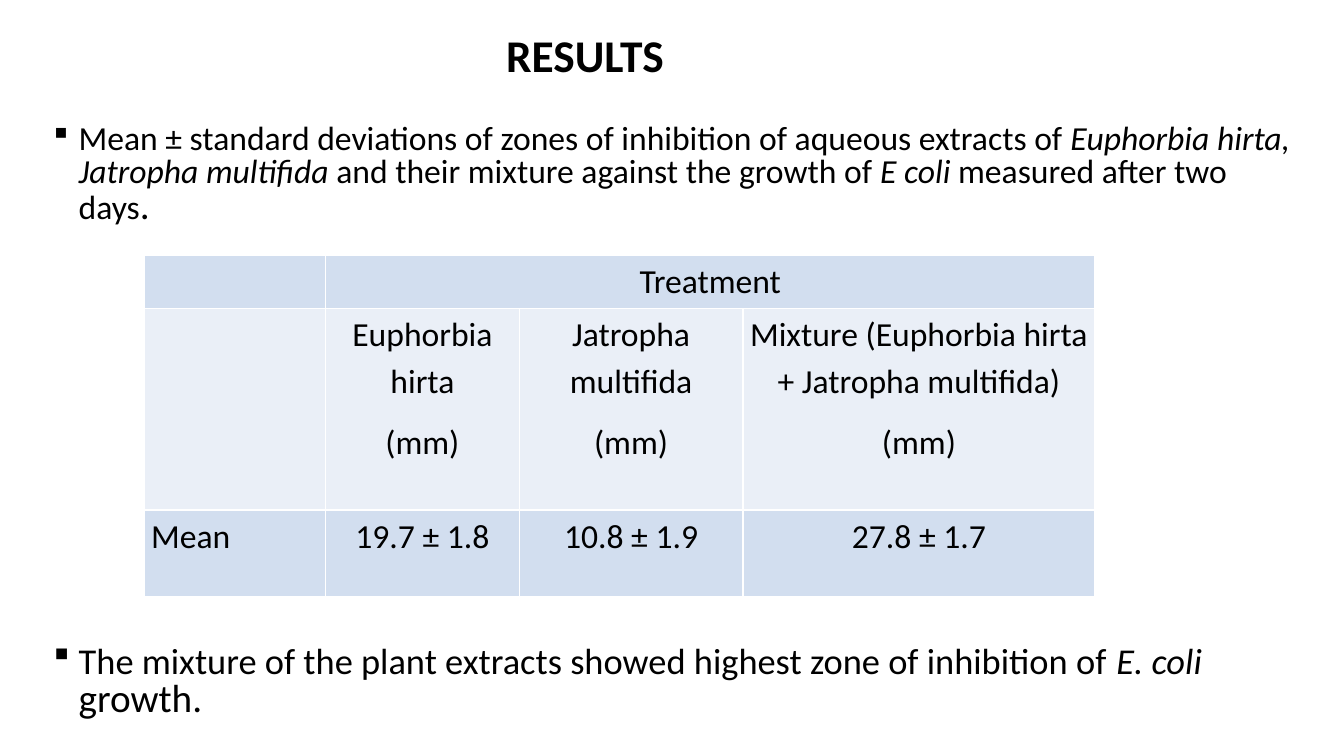
from lxml import etree
from pptx import Presentation
from pptx.dml.color import RGBColor
from pptx.enum.text import MSO_ANCHOR, MSO_AUTO_SIZE, PP_ALIGN
from pptx.oxml.ns import qn
from pptx.util import Inches, Pt

LEFT, CENTER, JUSTIFY = PP_ALIGN.LEFT, PP_ALIGN.CENTER, PP_ALIGN.JUSTIFY
MIDDLE, TOP = MSO_ANCHOR.MIDDLE, MSO_ANCHOR.TOP
NO_AUTOFIT = MSO_AUTO_SIZE.NONE
COLORS = {"text": "000000", "band": "D2DEEF", "light": "EAEFF7", "border": "FFFFFF"}
FONT = "Calibri"


def style_font(font, size):
    font.name = FONT
    font.size = Pt(size)
    font.color.rgb = RGBColor.from_string(COLORS["text"])


def add_borders(cell):
    properties = cell._tc.get_or_add_tcPr()
    for side in ("lnL", "lnR", "lnT", "lnB"):
        line = etree.SubElement(properties, qn(f"a:{side}"), w=str(Pt(1)))
        fill = etree.SubElement(line, qn("a:solidFill"))
        etree.SubElement(fill, qn("a:srgbClr"), val=COLORS["border"])


deck = Presentation()
deck.slide_width, deck.slide_height = Inches(13.33), Inches(7.5)
page = deck.slides.add_slide(deck.slide_layouts[1])

# Title
title = page.shapes.title
title.left, title.top = Inches(0.92), Inches(0.22)
title.width, title.height = Inches(11.5), Inches(0.71)
frame = title.text_frame
frame.auto_size = NO_AUTOFIT
frame.vertical_anchor = MIDDLE
frame.margin_left = Inches(4.1)
frame.text = "RESULTS"
para = frame.paragraphs[0]
para.alignment = LEFT
para.line_spacing = 0.9
style_font(para.font, 32.4)
para.font.bold = True

# Bullets: space before, then spans of (text, size, italic)
bullets = [
    (10, [
        ("Mean ± standard deviations of zones of inhibition of aqueous extracts of ", 24, False),
        ("Euphorbia hirta, Jatropha multifida", 24, True),
        (" and their mixture against the growth of ", 24, False),
        ("E coli ", 24, True),
        ("measured after two days", 24, False),
        (".", 28, False),
    ]),
    (298, [
        ("The mixture of the plant extracts showed highest zone of inhibition of ", 26, False),
        ("E. coli", 26, True),
        (" growth.", 28, False),
    ]),
]
body = page.placeholders[1]
body.left, body.top = Inches(0.43), Inches(1.19)
body.width, body.height = Inches(12.49), Inches(6.1)
frame = body.text_frame
frame.auto_size = NO_AUTOFIT
frame.vertical_anchor = TOP
for index, (space_before, spans) in enumerate(bullets):
    para = frame.add_paragraph() if index else frame.paragraphs[0]
    para.line_spacing = 0.8
    para.space_before = Pt(space_before)
    properties = para._p.get_or_add_pPr()
    properties.set("marL", str(Inches(0.25)))
    properties.set("indent", str(-Inches(0.25)))
    etree.SubElement(properties, qn("a:buFont"), typeface="Wingdings")
    etree.SubElement(properties, qn("a:buChar"), char="§")
    for text, size, italic in spans:
        span = para.add_run()
        span.text = text
        style_font(span.font, size)
        span.font.italic = italic

# Table
rows = [
    ["", "Treatment", "", ""],
    ["", "Euphorbia hirta\n(mm)", "Jatropha multifida\n(mm)",
     "Mixture (Euphorbia hirta + Jatropha multifida)\n(mm)"],
    ["Mean", "19.7 ± 1.8", "10.8 ± 1.9", "27.8 ± 1.7"],
]
column_widths = [1.8, 1.92, 2.22, 3.49]
row_heights = [0.53, 2.0, 0.86]
table = page.shapes.add_table(
    len(rows), len(column_widths), Inches(1.43), Inches(2.53),
    Inches(sum(column_widths)), Inches(sum(row_heights))).table
table.first_row = False
table.horz_banding = False
for column, width in zip(table.columns, column_widths):
    column.width = Inches(width)
for row, height in zip(table.rows, row_heights):
    row.height = Inches(height)
table.cell(0, 1).merge(table.cell(0, 3))

for row_index, texts in enumerate(rows):
    for column_index, text in enumerate(texts):
        cell = table.cell(row_index, column_index)
        cell.margin_left = cell.margin_right = Inches(0.07)
        cell.margin_top = cell.margin_bottom = 0
        add_borders(cell)
        cell.fill.solid()
        fill_name = "light" if row_index % 2 else "band"
        cell.fill.fore_color.rgb = RGBColor.from_string(COLORS[fill_name])
        cell.text = text
        for para in cell.text_frame.paragraphs:
            para.alignment = CENTER if column_index else JUSTIFY
            para.line_spacing = 1.15
            para.space_after = Pt(10)
            style_font(para.font, 24)

deck.save("out.pptx")
